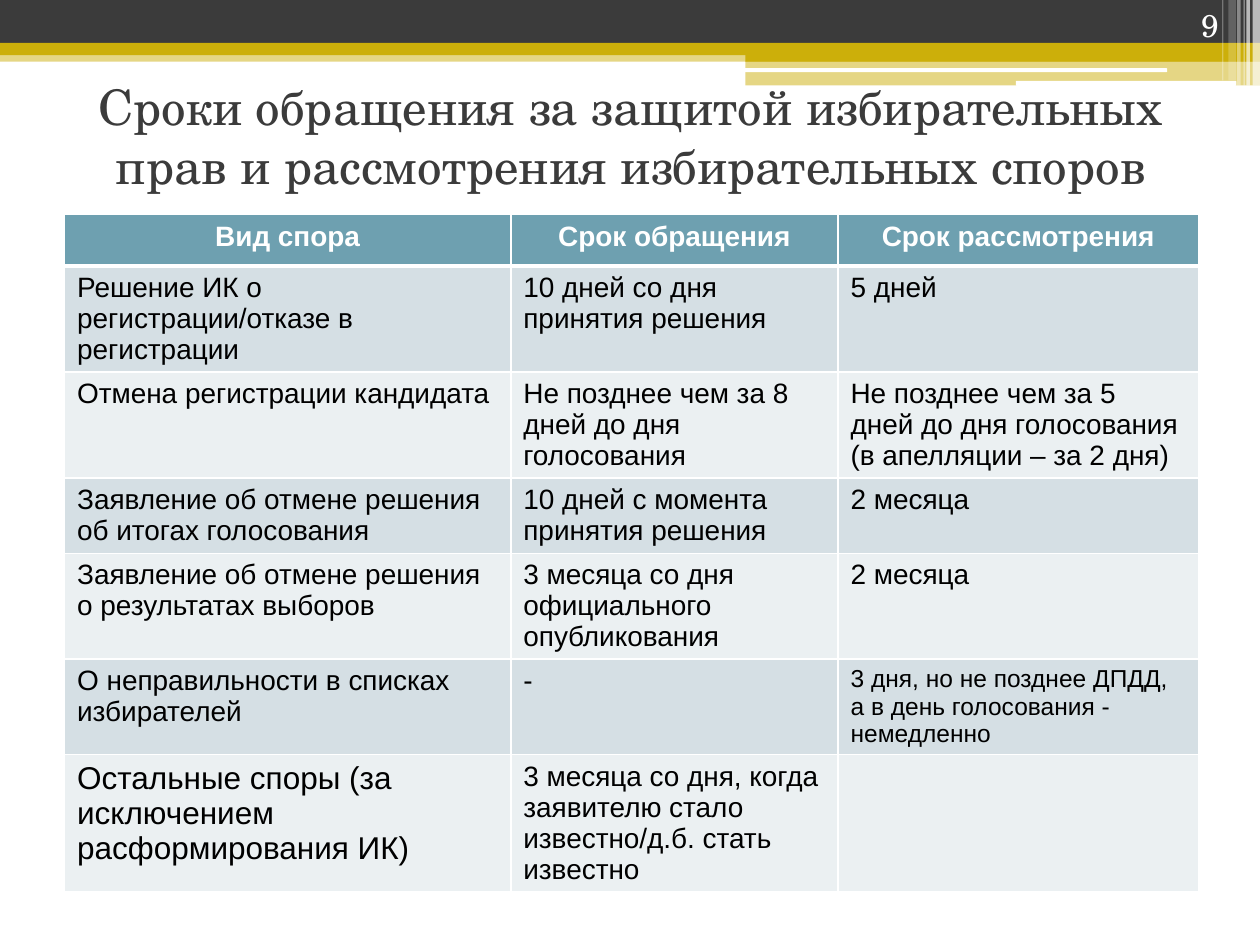
"""Build the slide on time limits for electoral disputes."""
from dataclasses import dataclass

import lxml.etree
import pptx
import pptx.dml.color
import pptx.enum.shapes
import pptx.enum.text
import pptx.oxml.ns
import pptx.util

Pt = pptx.util.Pt
SHAPES = pptx.enum.shapes.MSO_SHAPE
ALIGN = pptx.enum.text.PP_ALIGN
ANCHOR = pptx.enum.text.MSO_ANCHOR


@dataclass(frozen=True)
class Theme:
    dark: str = "3B3B3B"
    gold: str = "CCAF0A"
    white: str = "FFFFFF"
    black: str = "000000"
    header: str = "6EA0B0"
    bands: tuple = ("D5DFE4", "EBF0F2")
    serif: str = "TeX Gyre Schola"
    sans: str = "Arial"
    title_size: float = 28
    number_size: float = 18
    large_size: float = 18
    body_size: float = 16
    small_size: float = 14


@dataclass(frozen=True)
class Bar:
    left: float
    top: float
    width: float
    height: float
    color: str
    opacity: int = 100
    rounded: bool = False


@dataclass(frozen=True)
class Row:
    height: float
    texts: tuple
    sizes: tuple = (Theme.body_size,) * 3


THEME = Theme()

BARS = (
    Bar(0, 28.8, 720, 6.5, THEME.gold, 50),
    Bar(0, 0, 720, 24.5, THEME.dark),
    Bar(0, 24.5, 720, 7, THEME.gold),
    Bar(426, 28, 294, 7.2, THEME.gold),
    Bar(426, 34.8, 294, 14, THEME.gold, 50),
    Bar(425.5, 39, 241.5, 2.2, THEME.white, rounded=True),
    Bar(580.5, 46.2, 126, 2.8, THEME.white, rounded=True),
    Bar(715.8, 0, 4.2, 49, THEME.white, 65),
    Bar(712.2, 0, 2, 49, THEME.white, 65),
    Bar(710.6, 0, 0.7, 49, THEME.white, 60),
    Bar(707, 0, 2, 49, THEME.white, 40),
    Bar(702, 0, 4.3, 46, THEME.white, 20),
    Bar(698.4, 0, 0.7, 46, THEME.white, 30),
)

COLUMN_WIDTHS = (255, 187, 206)

ROWS = (
    Row(29.5, ("Вид спора", "Срок обращения", "Срок рассмотрения")),
    Row(60.5, ("Решение ИК о регистрации/отказе в регистрации",
               "10 дней со дня принятия решения", "5 дней")),
    Row(60.5, ("Отмена регистрации кандидата",
               "Не позднее чем за 8 дней до дня голосования",
               "Не позднее чем за 5 дней до дня голосования (в апелляции – за 2 дня)")),
    Row(43, ("Заявление об отмене решения об итогах голосования",
             "10 дней с момента принятия решения", "2 месяца")),
    Row(60.5, ("Заявление об отмене решения о результатах выборов",
               "3 месяца со дня официального опубликования", "2 месяца")),
    Row(54.5, ("О неправильности в списках избирателей", "-",
               "3 дня, но не позднее ДПДД, а в день голосования - немедленно"),
        (THEME.body_size, THEME.body_size, THEME.small_size)),
    Row(78, ("Остальные споры (за исключением расформирования ИК)",
             "3 месяца со дня, когда заявителю стало известно/д.б. стать известно", ""),
        (THEME.large_size, THEME.body_size, THEME.body_size)),
)


def rgb(color: str) -> pptx.dml.color.RGBColor:
    """Turn a hexadecimal string into a colour."""
    return pptx.dml.color.RGBColor.from_string(color)


def add_child(parent, tag: str, **attributes: str):
    """Append a DrawingML element to a parent."""
    return lxml.etree.SubElement(parent, pptx.oxml.ns.qn(tag), attributes)


def write(frame, text: str, face: str, size: float, color: str, align, bold: bool = False) -> None:
    """Set the text of a frame and format its runs."""
    frame.text = text
    frame.word_wrap = True
    for para in frame.paragraphs:
        para.alignment = align
        for span in para.runs:
            span.font.name = face
            span.font.size = Pt(size)
            span.font.bold = bold
            span.font.color.rgb = rgb(color)


def draw_bar(page, bar: Bar) -> None:
    """Draw one decorative bar."""
    kind = SHAPES.ROUNDED_RECTANGLE if bar.rounded else SHAPES.RECTANGLE
    shape = page.shapes.add_shape(kind, Pt(bar.left), Pt(bar.top), Pt(bar.width), Pt(bar.height))
    shape.shadow.inherit = False
    shape.line.fill.background()
    shape.fill.solid()
    shape.fill.fore_color.rgb = rgb(bar.color)
    if bar.opacity < 100:
        color = shape.fill._xPr.find(".//" + pptx.oxml.ns.qn("a:srgbClr"))
        add_child(color, "a:alpha", val=str(bar.opacity * 1000))


def draw_title(page, text: str) -> None:
    """Place the title above the bars in stacking order."""
    title = page.shapes.title
    title.left, title.top, title.width, title.height = Pt(36.5), Pt(54.7), Pt(648), Pt(45.4)
    write(title.text_frame, text, THEME.serif, THEME.title_size, THEME.dark, ALIGN.CENTER)
    title.text_frame.auto_size = pptx.enum.text.MSO_AUTO_SIZE.NONE
    title.text_frame.vertical_anchor = ANCHOR.MIDDLE
    page.shapes._spTree.append(title._element)


def draw_borders(cell, bottom: float) -> None:
    """Give a cell white borders."""
    properties = cell._tc.get_or_add_tcPr()
    for side, width in (("L", 1), ("R", 1), ("T", 1), ("B", bottom)):
        line = add_child(properties, f"a:ln{side}", w=str(Pt(width)))
        add_child(add_child(line, "a:solidFill"), "a:srgbClr", val=THEME.white)


def draw_table(page) -> None:
    """Draw the table of time limits."""
    height = sum(row.height for row in ROWS)
    table = page.shapes.add_table(len(ROWS), len(COLUMN_WIDTHS), Pt(36.9), Pt(122.6),
                                  Pt(sum(COLUMN_WIDTHS)), Pt(height)).table
    for column, width in zip(table.columns, COLUMN_WIDTHS):
        column.width = Pt(width)
    for index, row in enumerate(ROWS):
        table.rows[index].height = Pt(row.height)
        heading = index == 0
        color = THEME.white if heading else THEME.black
        align = ALIGN.CENTER if heading else ALIGN.LEFT
        for cell, text, size in zip(table.rows[index].cells, row.texts, row.sizes):
            draw_borders(cell, 3 if heading else 1)
            cell.fill.solid()
            cell.fill.fore_color.rgb = rgb(THEME.header if heading else THEME.bands[(index - 1) % 2])
            write(cell.text_frame, text, THEME.sans, size, color, align, heading)


def draw_number(page, text: str) -> None:
    """Write the page number in the top corner."""
    box = page.shapes.add_textbox(Pt(643.7), Pt(0), Pt(59.8), Pt(28.8))
    write(box.text_frame, text, THEME.serif, THEME.number_size, THEME.white, ALIGN.RIGHT)
    box.text_frame.vertical_anchor = ANCHOR.BOTTOM


def main() -> None:
    """Assemble and save the deck."""
    deck = pptx.Presentation()
    deck.slide_width, deck.slide_height = Pt(720), Pt(540)
    page = deck.slides.add_slide(deck.slide_layouts.get_by_name("Title Only"))
    for bar in BARS:
        draw_bar(page, bar)
    draw_title(page, "Сроки обращения за защитой избирательных прав и рассмотрения избирательных споров")
    draw_table(page)
    draw_number(page, "9")
    deck.save("out.pptx")


if __name__ == "__main__":
    main()
